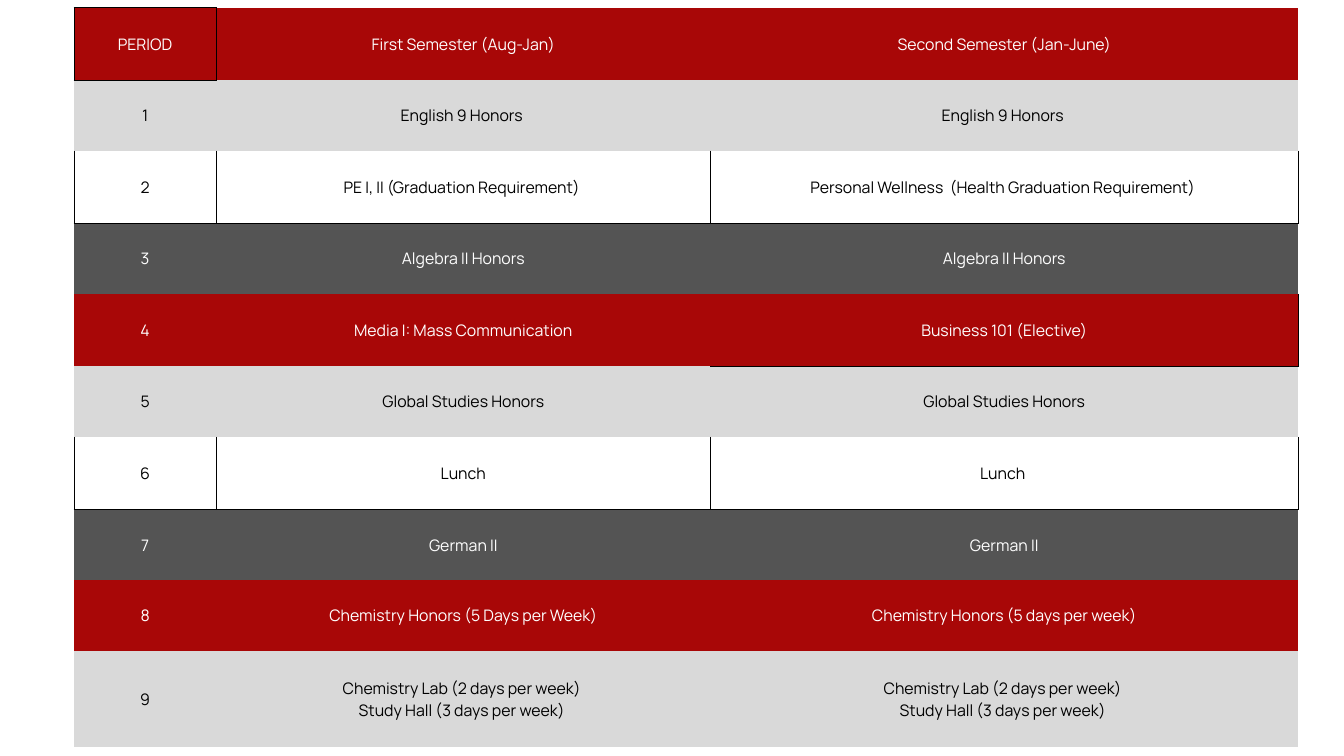
from typing import NamedTuple

import lxml.etree
import pptx
import pptx.dml.color
import pptx.enum.text
import pptx.oxml.ns
import pptx.util

SLIDE_WIDTH = pptx.util.Inches(20)
SLIDE_HEIGHT = pptx.util.Inches(11.25)

LEFT, TOP = 5.5, 1
COLUMN_PERCENTS = (10.6, 36.75, 43.75)
TALL, SHORT, LAST = 9.6, 9.33, 12.8

WHITE, BLACK = "FFFFFF", "000000"
FONT_NAME = "Manrope"
RULE_WIDTH = 0.75
PADDING = pptx.util.Inches(0.21)


class Band(NamedTuple):
    fill: str
    ink: str


class Period(NamedTuple):
    band: Band
    height: float
    texts: tuple[str, str, str]
    ruled: tuple[str, str, str] = ("", "", "")


class Side(NamedTuple):
    tag: str
    row_step: int
    column_step: int
    opposite: str


RED = Band("A80707", WHITE)
SILVER = Band("D9D9D9", BLACK)
PLAIN = Band(WHITE, BLACK)
CHARCOAL = Band("545454", WHITE)
BOXED = ("LRB",) * 3

SIDES = {
    "L": Side("a:lnL", 0, -1, "R"),
    "R": Side("a:lnR", 0, 1, "L"),
    "T": Side("a:lnT", -1, 0, "B"),
    "B": Side("a:lnB", 1, 0, "T"),
}

LAB = "Chemistry Lab (2 days per week) \nStudy Hall (3 days per week) "

SCHEDULE = (
    Period(RED, TALL, ("PERIOD", "First Semester (Aug-Jan)", "Second Semester (Jan-June)"), ("LRTB", "", "")),
    Period(SILVER, SHORT, ("1", "English 9 Honors ", "English 9 Honors ")),
    Period(
        PLAIN,
        TALL,
        ("2", "PE I, II (Graduation Requirement) ", "Personal Wellness  (Health Graduation Requirement) "),
        BOXED,
    ),
    Period(CHARCOAL, SHORT, ("3", "Algebra II Honors", "Algebra II Honors")),
    Period(RED, TALL, ("4", "Media I: Mass Communication", "Business 101 (Elective)"), ("", "", "RB")),
    Period(SILVER, SHORT, ("5", "Global Studies Honors", "Global Studies Honors")),
    Period(PLAIN, TALL, ("6", "Lunch", "Lunch "), BOXED),
    Period(CHARCOAL, SHORT, ("7", "German II", "German II")),
    Period(RED, SHORT, ("8", "Chemistry Honors (5 Days per Week)", "Chemistry Honors (5 days per week)")),
    Period(SILVER, LAST, ("9", LAB, LAB)),
)


def across(percent: float) -> int:
    return round(SLIDE_WIDTH * percent / 100)


def down(percent: float) -> int:
    return round(SLIDE_HEIGHT * percent / 100)


def color(value: str) -> pptx.dml.color.RGBColor:
    return pptx.dml.color.RGBColor.from_string(value)


def has_rule(row: int, column: int, side: str) -> bool:
    if not (0 <= row < len(SCHEDULE) and 0 <= column < len(COLUMN_PERCENTS)):
        return False
    return side in SCHEDULE[row].ruled[column]


def draw_borders(cell, row: int, column: int) -> None:
    name = pptx.oxml.ns.qn
    properties = cell._tc.get_or_add_tcPr()
    for index, (key, side) in enumerate(SIDES.items()):
        neighbour = (row + side.row_step, column + side.column_step)
        visible = has_rule(row, column, key) or has_rule(*neighbour, side.opposite)
        line = lxml.etree.Element(name(side.tag))
        line.set("w", str(pptx.util.Pt(RULE_WIDTH) if visible else 0))
        if visible:
            fill = lxml.etree.SubElement(line, name("a:solidFill"))
            lxml.etree.SubElement(fill, name("a:srgbClr")).set("val", BLACK)
        else:
            lxml.etree.SubElement(line, name("a:noFill"))
        properties.insert(index, line)


def write_text(cell, text: str, ink: str) -> None:
    frame = cell.text_frame
    for index, words in enumerate(text.split("\n")):
        para = frame.add_paragraph() if index else frame.paragraphs[0]
        para.alignment = pptx.enum.text.PP_ALIGN.CENTER
        para.line_spacing = pptx.util.Pt(23.8)
        span = para.add_run()
        span.text = words
        span.font.name = FONT_NAME
        span.font.size = pptx.util.Pt(17)
        span.font.color.rgb = color(ink)


def draw_cell(cell, row: int, column: int) -> None:
    period = SCHEDULE[row]
    cell.fill.solid()
    cell.fill.fore_color.rgb = color(period.band.fill)
    cell.vertical_anchor = pptx.enum.text.MSO_ANCHOR.MIDDLE
    cell.margin_left = cell.margin_right = PADDING
    cell.margin_top = cell.margin_bottom = PADDING
    write_text(cell, period.texts[column], period.band.ink)
    draw_borders(cell, row, column)


def draw_schedule(page) -> None:
    table = page.shapes.add_table(
        len(SCHEDULE),
        len(COLUMN_PERCENTS),
        across(LEFT),
        down(TOP),
        across(sum(COLUMN_PERCENTS)),
        down(sum(period.height for period in SCHEDULE)),
    ).table
    table.horz_banding = False
    table.first_row = False
    for column, percent in enumerate(COLUMN_PERCENTS):
        table.columns[column].width = across(percent)
    for row, period in enumerate(SCHEDULE):
        table.rows[row].height = down(period.height)
        for column in range(len(COLUMN_PERCENTS)):
            draw_cell(table.cell(row, column), row, column)


def main() -> None:
    deck = pptx.Presentation()
    deck.slide_width = SLIDE_WIDTH
    deck.slide_height = SLIDE_HEIGHT
    page = deck.slides.add_slide(deck.slide_layouts[6])
    draw_schedule(page)
    deck.save("out.pptx")


if __name__ == "__main__":
    main()
